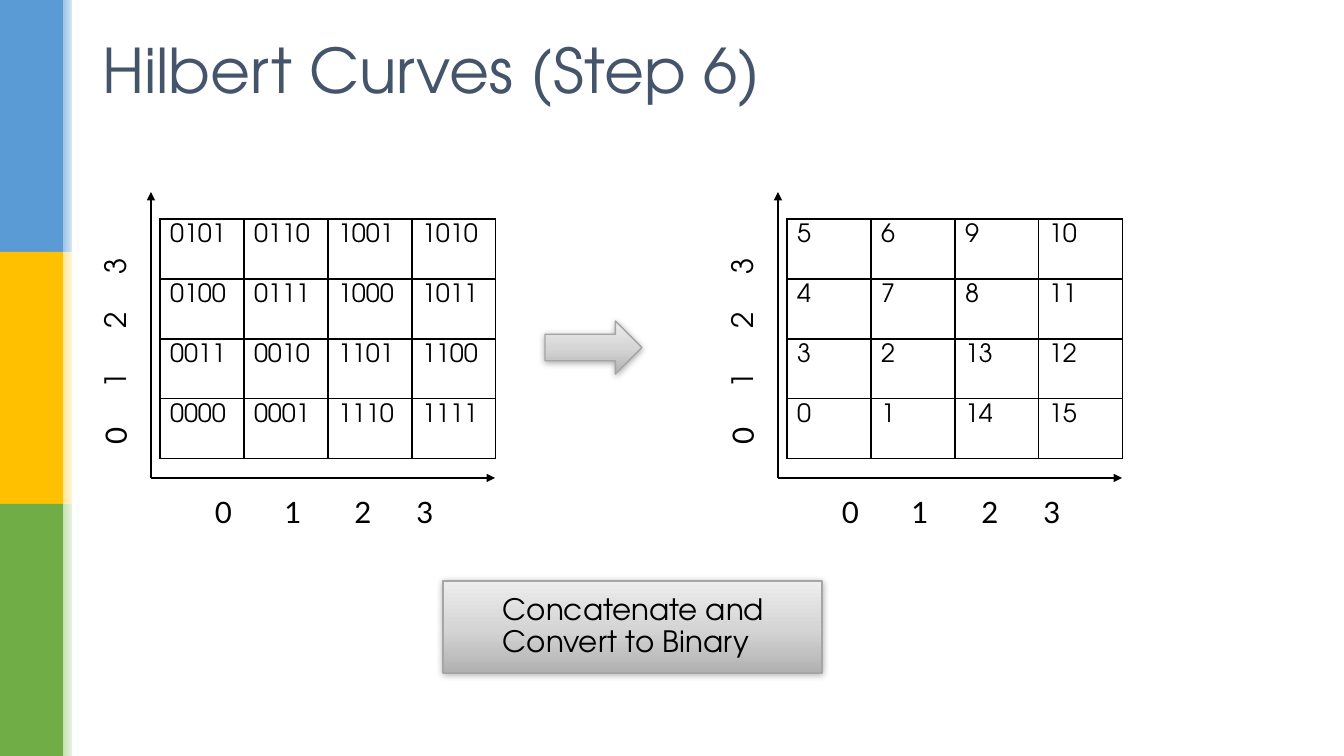
from lxml import etree
from pptx import Presentation
from pptx.dml.color import RGBColor
from pptx.enum.shapes import MSO_CONNECTOR, MSO_SHAPE
from pptx.enum.text import MSO_ANCHOR, PP_ALIGN
from pptx.oxml.ns import qn
from pptx.util import Pt

EMU_PER_PX = 12192000 / 1344
SANS = "TeX Gyre Adventor"
BINARY_CODES = [
    ["0101", "0110", "1001", "1010"],
    ["0100", "0111", "1000", "1011"],
    ["0011", "0010", "1101", "1100"],
    ["0000", "0001", "1110", "1111"],
]
SILVER = [(0, "B1B1B1"), (48, "D5D5D5"), (100, "EDEDED")]


def px(length):
    return round(length * EMU_PER_PX)


def box_px(*lengths):
    return [px(length) for length in lengths]


def color(hex_value):
    return RGBColor.from_string(hex_value)


def add_child(parent, tag, **attributes):
    values = {name: str(value) for name, value in attributes.items()}
    return etree.SubElement(parent, qn(tag), values)


def format_font(font, hex_value="000000", **values):
    for name, value in values.items():
        setattr(font, name, value)
    font.color.rgb = color(hex_value)


def fill_gradient(shape, stops, angle):
    shape.fill.gradient()
    shape.fill.gradient_angle = angle
    stop_list = shape._element.spPr.find(qn("a:gradFill")).find(qn("a:gsLst"))
    for stop in list(stop_list):
        stop_list.remove(stop)
    for position, hex_value in stops:
        stop = add_child(stop_list, "a:gs", pos=position * 1000)
        add_child(stop, "a:srgbClr", val=hex_value)


def add_block(slide, kind, box, hex_value=None):
    shape = slide.shapes.add_shape(kind, *box_px(*box))
    shape.shadow.inherit = False
    shape.line.fill.background()
    if hex_value:
        shape.fill.solid()
        shape.fill.fore_color.rgb = color(hex_value)
    return shape


def add_silver_block(slide, kind, box):
    shape = add_block(slide, kind, box)
    fill_gradient(shape, SILVER, 90)
    shape.line.color.rgb = color("A5A5A5")
    shape.line.width = Pt(1)
    effects = shape._element.spPr.find(qn("a:effectLst"))
    shadow = add_child(effects, "a:outerShdw", blurRad=Pt(5), dist=Pt(1),
                       dir=5400000, algn="ctr", rotWithShape=0)
    shade = add_child(shadow, "a:srgbClr", val="000000")
    add_child(shade, "a:alpha", val=32000)
    return shape


def add_sidebar(slide, left, top, width, height):
    bands = [("5B9BD5", "9DC3E6"), ("FFC000", "FFE699"), ("70AD47", "C5E0B4")]
    band_height = height // len(bands)
    for index, (strong, pale) in enumerate(bands):
        band_top = top + index * band_height
        add_block(slide, MSO_SHAPE.RECTANGLE, (left, band_top, width, band_height), strong)
        edge = add_block(slide, MSO_SHAPE.RECTANGLE,
                         (left + width, band_top, 16, band_height))
        fill_gradient(edge, [(0, pale), (100, "FFFFFF")], 0)
    add_block(slide, MSO_SHAPE.RECTANGLE, (left + width + 9, top, 5, height), "FFFFFF")


def add_title(slide, text, box):
    title = slide.shapes.title
    title.left, title.top, title.width, title.height = box_px(*box)
    title.text_frame.text = text
    title.text_frame.vertical_anchor = MSO_ANCHOR.MIDDLE
    paragraph = title.text_frame.paragraphs[0]
    paragraph.alignment = PP_ALIGN.LEFT
    paragraph.line_spacing = 0.9
    format_font(paragraph.font, "44546A", name=SANS, size=Pt(44))


def add_grid(slide, rows, left, top):
    column_width, row_height = 84, 60
    frame = slide.shapes.add_table(
        len(rows), len(rows[0]),
        *box_px(left, top, column_width * len(rows[0]), row_height * len(rows)))
    table = frame.table
    for column in table.columns:
        column.width = px(column_width)
    for row_index, row in enumerate(rows):
        table.rows[row_index].height = px(row_height)
        for column_index, value in enumerate(row):
            cell = table.cell(row_index, column_index)
            cell.text = str(value)
            paragraph = cell.text_frame.paragraphs[0]
            format_font(paragraph.font, name=SANS, size=Pt(18), bold=False)
            properties = cell._tc.get_or_add_tcPr()
            for side in ("L", "R", "T", "B"):
                border = add_child(properties, f"a:ln{side}", w=Pt(1))
                add_child(add_child(border, "a:solidFill"), "a:srgbClr", val="000000")
            cell.fill.solid()
            cell.fill.fore_color.rgb = color("FFFFFF")


def add_axis(slide, start, end):
    axis = slide.shapes.add_connector(MSO_CONNECTOR.STRAIGHT, *box_px(*start, *end))
    axis.line.color.rgb = color("000000")
    axis.line.width = Pt(1.75)
    add_child(axis.line._get_or_add_ln(), "a:tailEnd", type="triangle")
    add_child(axis._element.spPr, "a:effectLst")


def add_axis_numbers(slide, box, centers, fonts, rotation=0):
    label = add_block(slide, MSO_SHAPE.RECTANGLE, box, "FFFFFF")
    label.rotation = rotation
    label.text_frame.word_wrap = True
    label.text_frame.vertical_anchor = MSO_ANCHOR.TOP
    paragraph = label.text_frame.paragraphs[0]
    paragraph.alignment = PP_ALIGN.LEFT
    tabs = add_child(paragraph._p.get_or_add_pPr(), "a:tabLst")
    for number, (center, font_name) in enumerate(zip(centers, fonts)):
        add_child(tabs, "a:tab", pos=px(center), algn="ctr")
        run = paragraph.add_run()
        run.text = f"\t{number}"
        format_font(run.font, name=font_name, size=Pt(21))


def add_plot(slide, rows, left, top):
    origin = (left, top + 286)
    add_grid(slide, rows, left + 9, top + 27)
    add_axis(slide, origin, (left + 344, origin[1]))
    add_axis(slide, origin, (left, top))
    add_axis_numbers(slide, (left + 54, top + 297, 269, 50),
                     [8, 78, 148, 210], ["Lato"] * 4)
    add_axis_numbers(slide, (left - 168, top + 126, 269, 50),
                     [32, 87, 147, 201], ["Lato"] + [SANS] * 3, 270)


def add_callout(slide, text, box):
    callout = add_silver_block(slide, MSO_SHAPE.RECTANGLE, box)
    frame = callout.text_frame
    frame.word_wrap = True
    frame.vertical_anchor = MSO_ANCHOR.MIDDLE
    frame.text = text
    paragraph = frame.paragraphs[0]
    paragraph._p.get_or_add_pPr().set("marL", str(px(50)))
    formats = {"alignment": PP_ALIGN.LEFT, "line_spacing": 0.9, "space_after": Pt(6)}
    for name, value in formats.items():
        setattr(paragraph, name, value)
    format_font(paragraph.font, name=SANS, size=Pt(21))


def main():
    presentation = Presentation()
    presentation.slide_width, presentation.slide_height = box_px(1344, 756)
    slide = presentation.slides.add_slide(presentation.slide_layouts[5])
    add_sidebar(slide, 0, 0, 63, 756)
    add_title(slide, "Hilbert Curves (Step 6)", (92, 18, 1159, 111))
    decimals = [[int(code, 2) for code in row] for row in BINARY_CODES]
    add_plot(slide, BINARY_CODES, 151, 192)
    add_plot(slide, decimals, 778, 192)
    add_silver_block(slide, MSO_SHAPE.RIGHT_ARROW, (545, 321, 97, 53))
    add_callout(slide, "Concatenate and Convert to Binary", (443, 581, 379, 92))
    presentation.save("out.pptx")


if __name__ == "__main__":
    main()
